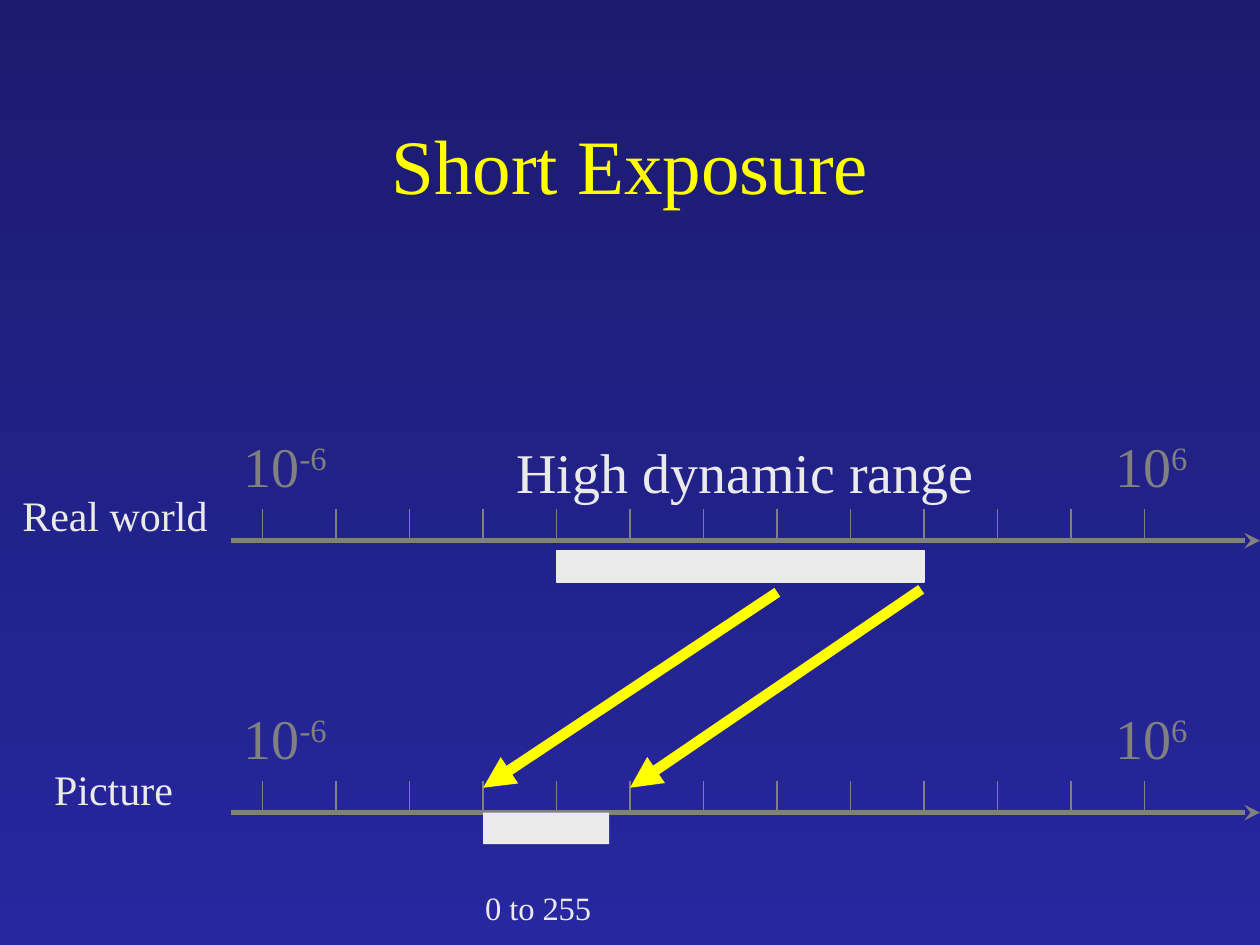
from pptx import Presentation
from pptx import util as u
from pptx.dml.color import RGBColor
from pptx.enum import shapes, text
from pptx.oxml import ns
from lxml import etree

NIGHT = RGBColor(0x1B, 0x1B, 0x70)
BLUE = RGBColor(0x27, 0x27, 0x9F)
YELLOW = RGBColor(0xFF, 0xFF, 0x00)
GRAY = RGBColor(0x80, 0x80, 0x80)
LIGHT = RGBColor(0xEA, 0xEA, 0xEA)


class ExposureSlide:
    """Holds the style and the current slide, and draws its elements."""

    font = "Times New Roman"

    def __init__(self, presentation):
        self.slide = presentation.slides.add_slide(presentation.slide_layouts[5])

    def background(self, top, bottom):
        fill = self.slide.background.fill
        fill.gradient()
        fill.gradient_angle = 270
        for stop, color, position in zip(fill.gradient_stops, (top, bottom), (0, 1)):
            stop.color.rgb = color
            stop.position = position

    def run(self, paragraph, words, size, color, raised=False):
        run = paragraph.add_run()
        run.text = words
        run.font.name = self.font
        run.font.size = u.Pt(size)
        run.font.color.rgb = color
        properties = run._r.get_or_add_rPr()
        if raised:
            properties.set("baseline", "30000")
        return properties

    def title(self, words):
        shape = self.slide.shapes.title
        shape.left, shape.top = u.Cm(1.9), u.Cm(1.7)
        shape.width, shape.height = u.Cm(21.6), u.Cm(3.18)
        frame = shape.text_frame
        frame.vertical_anchor = text.MSO_ANCHOR.MIDDLE
        paragraph = frame.paragraphs[0]
        paragraph.alignment = text.PP_ALIGN.CENTER
        properties = self.run(paragraph, words, 44, YELLOW)
        effects = etree.Element(ns.qn("a:effectLst"))
        shadow = etree.SubElement(effects, ns.qn("a:outerShdw"), dist="35921", dir="2700000")
        etree.SubElement(shadow, ns.qn("a:srgbClr"), val="000000")
        properties.find(ns.qn("a:solidFill")).addnext(effects)

    def label(self, left, top, width, height, runs, size, color):
        shape = self.slide.shapes.add_textbox(u.Cm(left), u.Cm(top), u.Cm(width), u.Cm(height))
        frame = shape.text_frame
        frame.word_wrap = False
        frame.auto_size = text.MSO_AUTO_SIZE.SHAPE_TO_FIT_TEXT
        paragraph = frame.paragraphs[0]
        before = etree.SubElement(paragraph._p.get_or_add_pPr(), ns.qn("a:spcBef"))
        etree.SubElement(before, ns.qn("a:spcPct"), val="50000")
        for words, raised in runs:
            self.run(paragraph, words, size, color, raised)

    def line(self, start, end, color, width, head=None):
        connector = self.slide.shapes.add_connector(
            shapes.MSO_CONNECTOR.STRAIGHT, *(u.Cm(value) for value in (*start, *end)))
        connector.line.color.rgb = color
        connector.line.width = u.Pt(width)
        properties = connector._element.spPr
        if head:
            etree.SubElement(properties.find(ns.qn("a:ln")), ns.qn("a:tailEnd"), type=head)
        etree.SubElement(properties, ns.qn("a:effectLst"))

    def bar(self, left, top, width, outlined=False):
        shape = self.slide.shapes.add_shape(
            shapes.MSO_SHAPE.RECTANGLE, u.Cm(left), u.Cm(top), u.Cm(width), u.Cm(0.64))
        shape.shadow.inherit = False
        shape.fill.solid()
        shape.fill.fore_color.rgb = LIGHT
        if outlined:
            shape.line.color.rgb = LIGHT
            shape.line.width = u.Pt(1)
        else:
            shape.line.fill.background()

    def scale(self, axis):
        first, last, intervals = 5.29, 23.07, 12
        self.label(4.66, axis - 2.33, 2.26, 1.6, [("10", False), ("-6", True)], 32, GRAY)
        for index in range(intervals + 1):
            x = first + (last - first) * index / intervals
            self.line((x, axis - 0.64), (x, axis), GRAY, 1)
        self.label(22.23, axis - 2.33, 2, 1.6, [("10", False), ("6", True)], 32, GRAY)
        self.line((4.66, axis), (25.4, axis), GRAY, 3, "stealth")


def main():
    presentation = Presentation()
    presentation.slide_width, presentation.slide_height = u.Cm(25.4), u.Cm(19.05)
    slide = ExposureSlide(presentation)
    slide.background(NIGHT, BLUE)
    slide.title("Short Exposure")
    world_axis, picture_axis = 10.9, 16.38
    for axis in (world_axis, picture_axis):
        slide.scale(axis)
    slide.label(0.2, 9.75, 4.24, 1.27, [("Real world", False)], 24, LIGHT)
    slide.label(0.84, 15.27, 2.9, 1.27, [("Picture", False)], 24, LIGHT)
    slide.line((18.57, 11.88), (12.7, 15.88), YELLOW, 6, "triangle")
    slide.line((15.67, 11.94), (9.74, 15.88), YELLOW, 6, "triangle")
    slide.bar(11.22, 11.1, 7.41, outlined=True)
    slide.bar(9.74, picture_axis, 2.54)
    slide.label(10.16, 8.69, 9.73, 1.6, [("High dynamic range", False)], 32, LIGHT)
    slide.label(9.53, 17.65, 2.95, 1.14, [("0 to 255", True)], 32, LIGHT)
    presentation.save("out.pptx")


if __name__ == "__main__":
    main()
